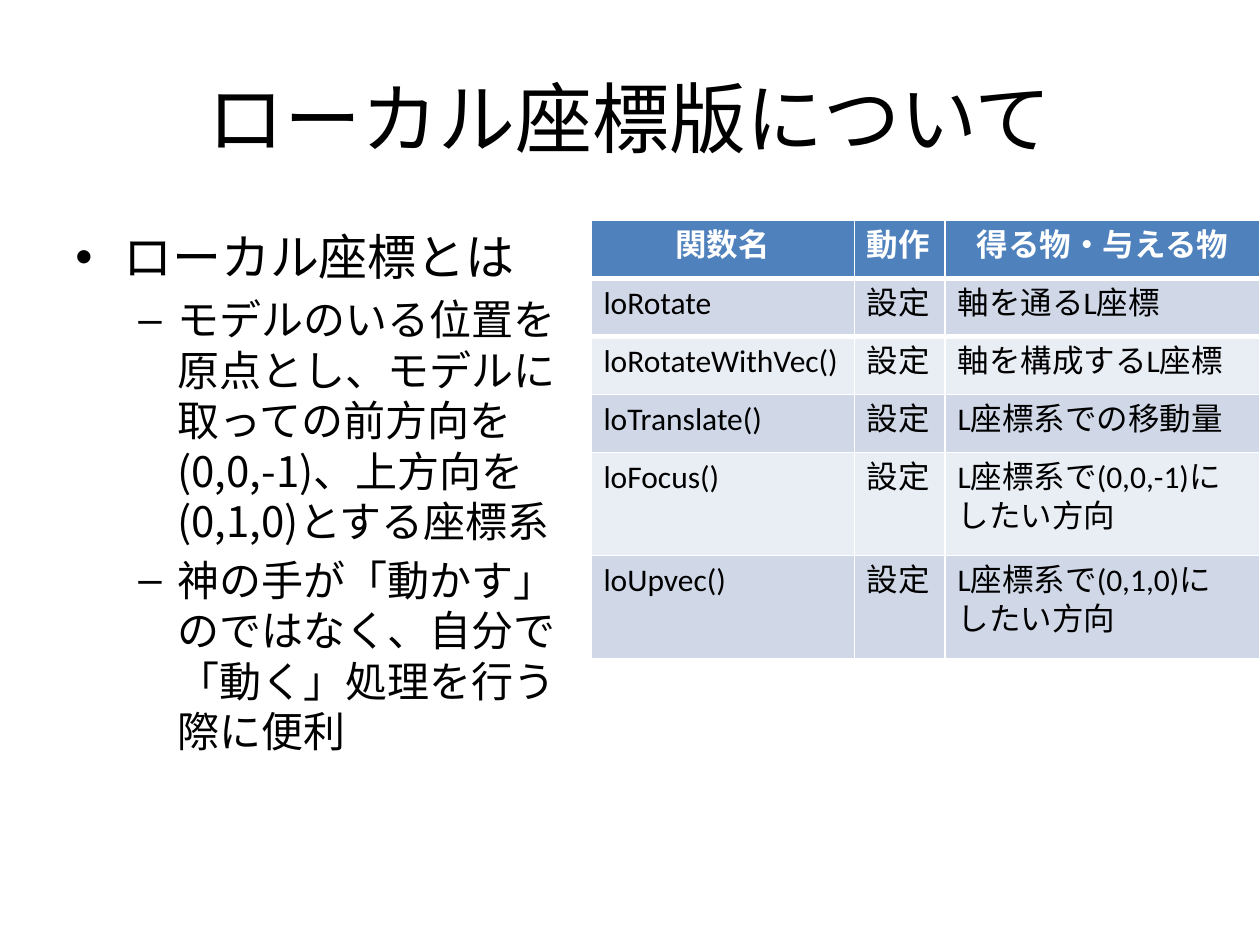
from pptx import Presentation
from pptx.dml.color import RGBColor
from pptx.enum.text import MSO_ANCHOR, PP_ALIGN
from pptx.oxml.ns import qn
from pptx.util import Inches, Pt
from lxml.etree import Element, SubElement

JAPANESE_FONT = "Noto Sans CJK JP"
LATIN_FONT = "Calibri"
TITLE = "ローカル座標版について"

# Text, bullet, size, left margin, hanging indent
BODY = [
    ("ローカル座標とは", "•", 28, 0.38, 0.38),
    ("モデルのいる位置を原点とし、モデルに取っての前方向を(0,0,-1)、"
     "上方向を(0,1,0)とする座標系", "–", 24, 0.81, 0.31),
    ("神の手が「動かす」のではなく、自分で「動く」処理を行う際に便利",
     "–", 24, 0.81, 0.31),
]

TABLE = [
    ("関数名", "動作", "得る物・与える物"),
    ("loRotate", "設定", "軸を通るL座標"),
    ("loRotateWithVec()", "設定", "軸を構成するL座標"),
    ("loTranslate()", "設定", "L座標系での移動量"),
    ("loFocus()", "設定", "L座標系で(0,0,-1)に\nしたい方向"),
    ("loUpvec()", "設定", "L座標系で(0,1,0)に\nしたい方向"),
]
COLUMN_WIDTHS = [2.09, 0.72, 2.5]
ROW_HEIGHTS = [0.46] * 4 + [0.82] * 2
HEADER_FILL = "4F81BD"
BAND_FILLS = ["D0D8E8", "E9EDF4"]


def color(value):
    return RGBColor.from_string(value)


def write(paragraph, text, size=18, fill="000000", bold=False,
          font=JAPANESE_FONT, align=PP_ALIGN.LEFT):
    paragraph.text = text
    paragraph.alignment = align
    for run in paragraph.runs:
        run.font.name = font
        run.font.size = Pt(size)
        run.font.bold = bold
        run.font.color.rgb = color(fill)
        east_asian = SubElement(run.font._element, qn("a:ea"))
        east_asian.set("typeface", font)


def add_bullet(paragraph, character, margin, hanging):
    properties = paragraph._p.get_or_add_pPr()
    properties.set("marL", str(Inches(margin)))
    properties.set("indent", str(-Inches(hanging)))
    SubElement(properties, qn("a:buFont")).set("typeface", "Arial")
    SubElement(properties, qn("a:buChar")).set("char", character)


def add_border(cell, side, width):
    line = Element(qn(f"a:{side}"), w=str(Pt(width)))
    fill = SubElement(line, qn("a:solidFill"))
    SubElement(fill, qn("a:srgbClr")).set("val", "FFFFFF")
    cell._tc.get_or_add_tcPr().insert(0, line)


def add_text_frame(slide, left, top, width, height, anchor=MSO_ANCHOR.TOP):
    box = slide.shapes.add_textbox(
        Inches(left), Inches(top), Inches(width), Inches(height))
    box.text_frame.word_wrap = True
    box.text_frame.vertical_anchor = anchor
    return box.text_frame


presentation = Presentation()
presentation.slide_width = Inches(10)
presentation.slide_height = Inches(7.5)
slide = presentation.slides.add_slide(presentation.slide_layouts[6])

# Title
title = add_text_frame(slide, 0.5, 0.3, 9, 1.25, MSO_ANCHOR.MIDDLE)
write(title.paragraphs[0], TITLE, size=44, align=PP_ALIGN.CENTER)

# Bulleted explanation
body = add_text_frame(slide, 0.5, 1.75, 4.19, 4.95)
for index, (text, bullet, size, margin, hanging) in enumerate(BODY):
    paragraph = body.add_paragraph() if index else body.paragraphs[0]
    write(paragraph, text, size=size)
    paragraph.space_before = Pt(size * 0.2)
    add_bullet(paragraph, bullet, margin, hanging)

# Function table
table = slide.shapes.add_table(
    len(TABLE), len(COLUMN_WIDTHS), Inches(4.69), Inches(1.75),
    Inches(sum(COLUMN_WIDTHS)), Inches(sum(ROW_HEIGHTS))).table
for column, width in zip(table.columns, COLUMN_WIDTHS):
    column.width = Inches(width)
for row, height in zip(table.rows, ROW_HEIGHTS):
    row.height = Inches(height)
for row_index, texts in enumerate(TABLE):
    header = row_index == 0
    cell_fill = HEADER_FILL if header else BAND_FILLS[(row_index - 1) % 2]
    for column_index, text in enumerate(texts):
        cell = table.cell(row_index, column_index)
        cell.fill.solid()
        cell.fill.fore_color.rgb = color(cell_fill)
        if header:
            add_border(cell, "lnB", 3)
        elif row_index == 1:
            add_border(cell, "lnT", 3)
        centered = header and column_index != 1
        write(cell.text_frame.paragraphs[0], text, font=LATIN_FONT,
              bold=header, fill="FFFFFF" if header else "000000",
              align=PP_ALIGN.CENTER if centered else PP_ALIGN.LEFT)

presentation.save("out.pptx")
